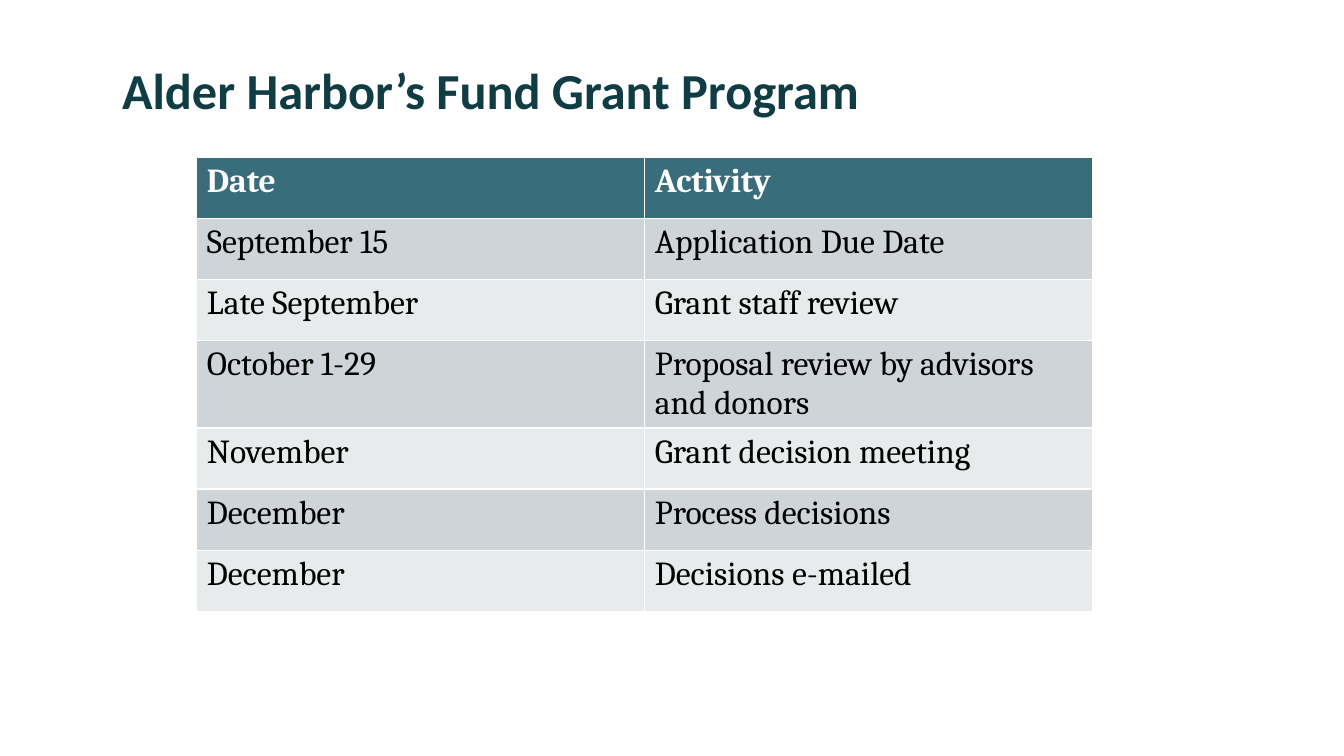
from typing import NamedTuple

from pptx import Presentation
from pptx.dml import color
from pptx.enum import text
from pptx.slide import Slide
from pptx.util import Pt

COLORS = {
    "title": "103D43",
    "header": "396D7C",
    "odd": "CED4D7",
    "even": "E8EBEC",
    "light": "FFFFFF",
    "dark": "000000",
}
COLUMN_WIDTH = 320
ROW_HEIGHT = 43.6


class Milestone(NamedTuple):
    date: str
    activity: str


HEADINGS = Milestone("Date", "Activity")
SCHEDULE = [
    Milestone("September 15", "Application Due Date"),
    Milestone("Late September", "Grant staff review"),
    Milestone("October 1-29", "Proposal review by advisors and donors"),
    Milestone("November", "Grant decision meeting"),
    Milestone("December", "Process decisions"),
    Milestone("December", "Decisions e-mailed"),
]


def format_paragraph(paragraph, color_name: str, **font_values) -> None:
    for attribute, value in font_values.items():
        setattr(paragraph.font, attribute, value)
    paragraph.font.color.rgb = color.RGBColor.from_string(COLORS[color_name])


def add_heading(slide: Slide, wording: str) -> None:
    heading = slide.shapes.title
    place = {"left": 80, "top": 19.4, "width": 814, "height": 95}
    for attribute, value in place.items():
        setattr(heading, attribute, Pt(value))
    frame = heading.text_frame
    frame.text = wording
    frame_format = {
        "word_wrap": True,
        "auto_size": text.MSO_AUTO_SIZE.NONE,
        "vertical_anchor": text.MSO_ANCHOR.MIDDLE,
    }
    for attribute, value in frame_format.items():
        setattr(frame, attribute, value)
    paragraph = frame.paragraphs[0]
    paragraph.alignment = text.PP_ALIGN.LEFT
    paragraph.line_spacing = 0.9
    format_paragraph(paragraph, "title", name="Calibri", size=Pt(36), bold=True)


def add_schedule(slide: Slide, milestones: list[Milestone]) -> None:
    rows = [HEADINGS, *milestones]
    columns = len(HEADINGS)
    schedule = slide.shapes.add_table(
        len(rows), columns, Pt(140.6), Pt(112.5),
        Pt(columns * COLUMN_WIDTH), Pt(len(rows) * ROW_HEIGHT),
    ).table
    for row_index, milestone in enumerate(rows):
        schedule.rows[row_index].height = Pt(ROW_HEIGHT)
        is_header = row_index == 0
        band = "header" if is_header else ("odd" if row_index % 2 else "even")
        for column_index, wording in enumerate(milestone):
            cell = schedule.cell(row_index, column_index)
            cell.text = wording
            cell.fill.solid()
            cell.fill.fore_color.rgb = color.RGBColor.from_string(COLORS[band])
            format_paragraph(
                cell.text_frame.paragraphs[0],
                "light" if is_header else "dark",
                name="Cambria", size=Pt(24), bold=is_header,
            )


def main() -> None:
    presentation = Presentation()
    presentation.slide_width = Pt(960)
    presentation.slide_height = Pt(540)
    slide = presentation.slides.add_slide(presentation.slide_layouts[5])
    add_heading(slide, "Alder Harbor’s Fund Grant Program")
    add_schedule(slide, SCHEDULE)
    presentation.save("out.pptx")


if __name__ == "__main__":
    main()
